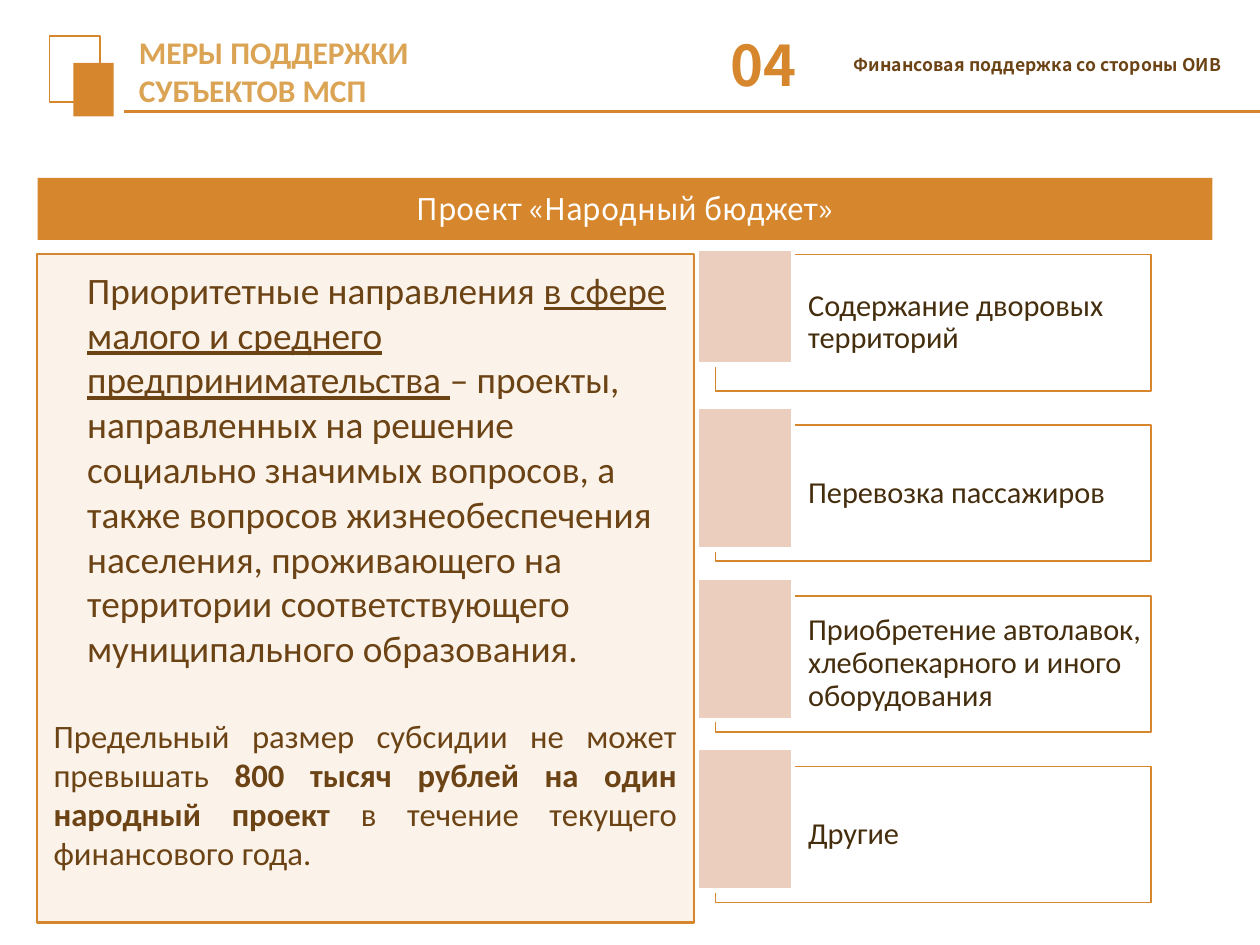
from pptx import Presentation
from pptx.dml.color import RGBColor
from pptx.enum.shapes import MSO_CONNECTOR, MSO_SHAPE
from pptx.enum.text import MSO_ANCHOR, PP_ALIGN
from pptx.oxml.ns import qn
from pptx.util import Cm, Pt
from lxml import etree

RECTANGLE = MSO_SHAPE.RECTANGLE
ROUNDED = MSO_SHAPE.ROUNDED_RECTANGLE
STRAIGHT = MSO_CONNECTOR.STRAIGHT
TOP, MIDDLE = MSO_ANCHOR.TOP, MSO_ANCHOR.MIDDLE
LEFT, CENTER, JUSTIFY = PP_ALIGN.LEFT, PP_ALIGN.CENTER, PP_ALIGN.JUSTIFY

DIRECTIONS = [
    "Содержание дворовых территорий",
    "Перевозка пассажиров",
    "Приобретение автолавок, хлебопекарного и иного оборудования",
    "Другие",
]
CARD_LEFT, CARD_TOP, CARD_PITCH = 10.82, 3.85, 2.58
ACCENT_LEFT, ACCENT_WIDTH, ACCENT_RISE, ACCENT_HEIGHT = 10.54, 1.45, 0.28, 2.16
FIRST_ACCENT = (3.76, 1.75)


def color(value):
    """Turn a hex string into a colour."""
    return RGBColor.from_string(value)


def write(paragraph, text, *, size, font, fill, bold=False, underline=False):
    """Append a formatted run to a paragraph."""
    run = paragraph.add_run()
    run.text = text
    run.font.size = Pt(size)
    run.font.name = font
    run.font.color.rgb = color(fill)
    run.font.bold = bold
    run.font.underline = underline


class SlideBuilder:
    """Hold the style and the current slide."""

    ORANGE, GOLD, BROWN, DARK = "D6862D", "DAA454", "6C4315", "452E0E"
    CREAM, PINK, WHITE = "EFCFAB", "ECCEBE", "FFFFFF"
    BODY, HEADING = "Calibri", "Noto Sans CJK SC"

    def __init__(self, slide):
        """Take the slide to draw on."""
        self.slide = slide

    def box(self, left, top, width, height, *, kind=RECTANGLE, fill=None,
            opacity=None, line=None, line_width=0.75):
        """Add a rectangle with the given fill and outline."""
        shape = self.slide.shapes.add_shape(
            kind, Cm(left), Cm(top), Cm(width), Cm(height))
        shape.shadow.inherit = False
        if kind == ROUNDED:
            shape.adjustments[0] = 0
        if fill:
            shape.fill.solid()
            shape.fill.fore_color.rgb = color(fill)
        else:
            shape.fill.background()
        if opacity:
            tint = next(shape.fill._xPr.iter(qn("a:srgbClr")))
            etree.SubElement(tint, qn("a:alpha")).set("val", str(opacity * 1000))
        if line:
            shape.line.color.rgb = color(line)
            shape.line.width = Pt(line_width)
        else:
            shape.line.fill.background()
        return shape

    def frame(self, shape, *, anchor=MIDDLE, align=LEFT,
              insets=(0.25, 0.13, 0.25, 0.13), wrap=True):
        """Prepare a shape for text and return its first paragraph."""
        frame = shape.text_frame
        frame.word_wrap = wrap
        frame.vertical_anchor = anchor
        (frame.margin_left, frame.margin_top,
         frame.margin_right, frame.margin_bottom) = map(Cm, insets)
        frame.paragraphs[0].alignment = align
        return frame.paragraphs[0]

    def label(self, text, left, top, width, height, *, align, wrap, **style):
        """Add a text box."""
        shape = self.slide.shapes.add_textbox(
            Cm(left), Cm(top), Cm(width), Cm(height))
        paragraph = self.frame(shape, anchor=TOP, align=align, wrap=wrap)
        write(paragraph, text, font=self.HEADING, bold=True, **style)

    def title(self, text, left, top, width, height):
        """Move and fill the title placeholder."""
        shape = self.slide.shapes.title
        shape.left, shape.top = Cm(left), Cm(top)
        shape.width, shape.height = Cm(width), Cm(height)
        write(self.frame(shape), text, size=13.5, font=self.BODY,
              fill=self.GOLD, bold=True)

    def rule(self, left, top, right):
        """Add a horizontal line."""
        connector = self.slide.shapes.add_connector(
            STRAIGHT, Cm(left), Cm(top), Cm(right), Cm(top))
        connector.line.color.rgb = color(self.ORANGE)
        connector.line.width = Pt(1.25)
        etree.SubElement(connector._element.spPr, qn("a:effectLst"))

    def header(self):
        """Draw the emblem, title, number and section name."""
        self.box(0.75, 0.54, 0.76, 1, line=self.ORANGE)
        self.box(1.11, 0.95, 0.61, 0.81, fill=self.ORANGE)
        self.rule(1.88, 1.69, 19.05)
        self.label("04", 10.8, 0.33, 1.57, 1.27, align=LEFT, wrap=False,
                   size=24, fill=self.ORANGE)
        self.label("Финансовая поддержка со стороны ОИВ", 12.37, 0.69, 6.63, 0.58,
                   align=CENTER, wrap=True, size=7.5, fill=self.BROWN)
        self.title("МЕРЫ ПОДДЕРЖКИ СУБЪЕКТОВ МСП", 1.85, 0.53, 6.78, 1.09)

    def banner(self, text):
        """Draw the project banner."""
        shape = self.box(0.57, 2.69, 17.76, 0.94, kind=ROUNDED, fill=self.ORANGE)
        write(self.frame(shape, align=CENTER), text, size=12.8,
              font=self.HEADING, fill=self.WHITE)

    def panel(self):
        """Draw the panel with the priorities and the subsidy limit."""
        shape = self.box(0.56, 3.84, 9.93, 10.11, kind=ROUNDED, fill=self.CREAM,
                         opacity=24, line=self.ORANGE, line_width=1)
        style = {"font": self.BODY, "fill": self.BROWN}
        priorities = self.frame(shape, anchor=TOP, insets=(0.25, 0.2, 0.25, 0.13))
        priorities._p.get_or_add_pPr().set("marL", str(Cm(0.51)))
        write(priorities, "Приоритетные направления ", size=16, **style)
        write(priorities, "в сфере малого и среднего предпринимательства ",
              size=16, underline=True, **style)
        write(priorities, "– проекты, направленных на решение социально значимых "
              "вопросов, а также вопросов жизнеобеспечения населения, проживающего "
              "на территории соответствующего муниципального образования.",
              size=16, **style)
        limit = shape.text_frame.add_paragraph()
        limit.alignment = JUSTIFY
        limit.space_before = Pt(19.5)
        write(limit, "Предельный размер субсидии не может превышать ", size=14, **style)
        write(limit, "800 тысяч рублей на один народный проект",
              size=14, bold=True, **style)
        write(limit, " в течение текущего финансового года.", size=14, **style)

    def card(self, text, top, accent_top, accent_height):
        """Draw one direction with its accent block."""
        shape = self.box(CARD_LEFT, top, 6.58, 2.06, fill=self.WHITE,
                         opacity=40, line=self.ORANGE)
        paragraph = self.frame(shape, insets=(1.4, 0.13, 0.13, 0.13))
        paragraph.line_spacing = 0.9
        write(paragraph, text, size=13, font=self.BODY, fill=self.DARK)
        self.box(ACCENT_LEFT, accent_top, ACCENT_WIDTH, accent_height,
                 fill=self.PINK, line=self.WHITE, line_width=2)


def main():
    """Build and save the slide."""
    presentation = Presentation()
    presentation.slide_width, presentation.slide_height = Cm(19.05), Cm(14.29)
    builder = SlideBuilder(presentation.slides.add_slide(presentation.slide_layouts[5]))
    builder.header()
    builder.panel()
    builder.banner("Проект «Народный бюджет»")
    for index, direction in enumerate(DIRECTIONS):
        top = CARD_TOP + index * CARD_PITCH
        accent = (top - ACCENT_RISE, ACCENT_HEIGHT) if index else FIRST_ACCENT
        builder.card(direction, top, *accent)
    presentation.save("out.pptx")


if __name__ == "__main__":
    main()
